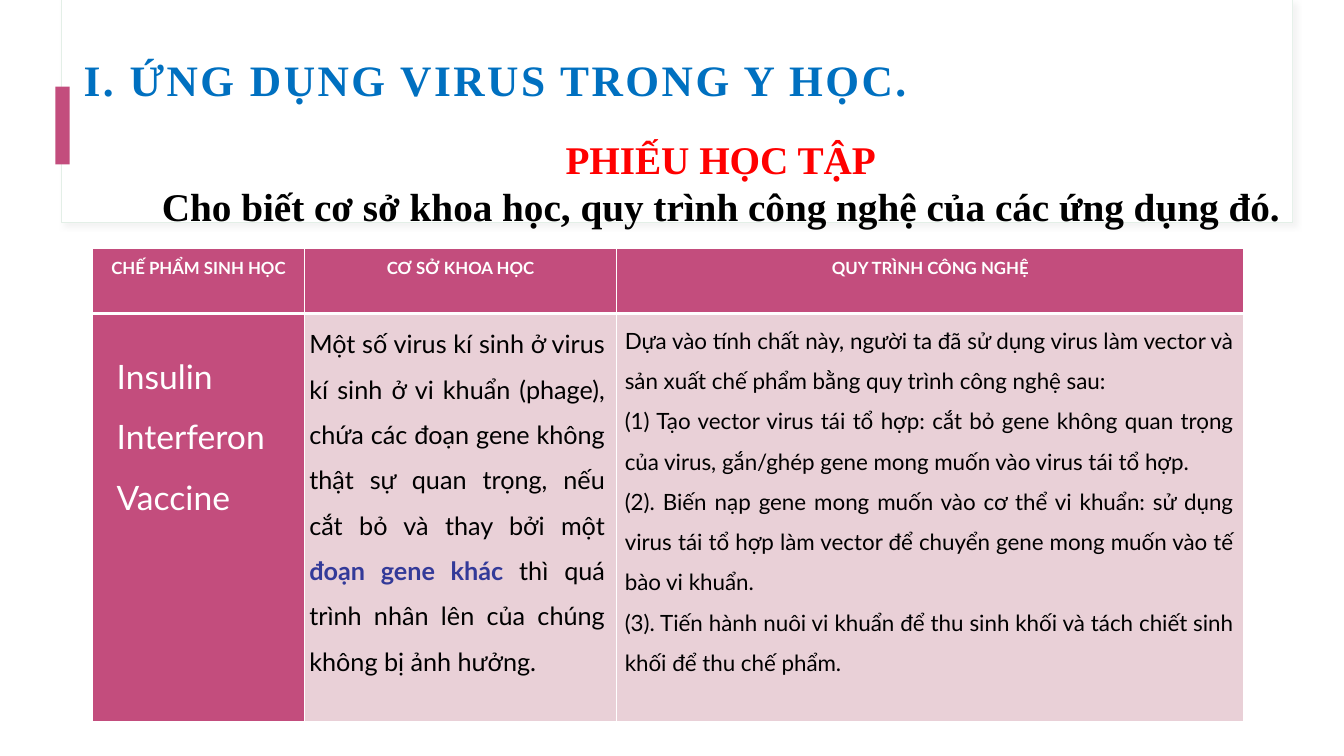
from lxml.etree import SubElement
from pptx import Presentation
from pptx.dml.color import RGBColor as RGB
from pptx.enum.shapes import MSO_SHAPE as SHAPE
from pptx.enum.text import MSO_ANCHOR as ANCHOR, MSO_AUTO_SIZE as AUTO, PP_ALIGN as ALIGN
from pptx.oxml import parse_xml
from pptx.oxml.ns import nsdecls, qn
from pptx.util import Inches, Pt

C = {"white": "FFFFFF", "edge": "E3EFE7", "pink": "C34D7D", "pale": "E9D0D7",
     "blue": "0070C0", "red": "FF0000", "black": "000000", "indigo": "333A99"}

prs = Presentation()
prs.slide_width, prs.slide_height = Inches(13.33), Inches(7.5)
s = prs.slides.add_slide(prs.slide_layouts[6])
COL, ROW = prs.slide_width / 100, prs.slide_height / 100  # 100 x 100 grid


def box(x, y, w, h):
    return [int(v) for v in (x * COL, y * ROW, w * COL, h * ROW)]


def write(tf, paras, align, spacing, **fmt):
    """Each paragraph is a list of (text, font changes) runs."""
    for i, runs in enumerate(paras):
        p = tf.paragraphs[0] if i == 0 else tf.add_paragraph()
        p.alignment, p.line_spacing = align, spacing
        for text, changes in runs:
            r = p.add_run()
            r.text = text
            look = {**fmt, **changes}
            r.font.color.rgb = RGB.from_string(C[look.pop("color")])
            for key, value in look.items():
                setattr(r.font, key, value)


# Header panel and accent bar
for place, fill, line in [((4.58, 0, 91.58, 29.47), "white", "edge"),
                          ((4.65, 0, 91.5, 29.33), "white", None),
                          ((4.13, 11.47, 1.05, 10.27), "pink", None)]:
    sp = s.shapes.add_shape(SHAPE.RECTANGLE, *box(*place))
    sp.shadow.inherit = False
    sp.fill.solid()
    sp.fill.fore_color.rgb = RGB.from_string(C[fill])
    if line:
        sp.line.color.rgb = RGB.from_string(C[line])
        sp.line.width = Pt(0.75)
        effects = sp._element.spPr.find(qn("a:effectLst"))
        effects.append(parse_xml(
            f'<a:outerShdw {nsdecls("a")} blurRad="50800" dist="38100" dir="2700000">'
            '<a:srgbClr val="D9D9D9"><a:alpha val="30000"/></a:srgbClr></a:outerShdw>'))
    else:
        sp.line.fill.background()

# Table grid
columns, rows = (15.75, 23.25, 46.65), (8.67, 54)
heads = ["CHẾ PHẨM SINH HỌC", "CƠ SỞ KHOA HỌC", "QUY TRÌNH CÔNG NGHỆ"]
table = s.shapes.add_table(2, 3, *box(6.9, 32.8, sum(columns), sum(rows))).table
for column, width in zip(table.columns, columns):
    column.width = int(width * COL)
for row, height in zip(table.rows, rows):
    row.height = int(height * ROW)
for i in range(2):
    for j, head in enumerate(heads):
        cell = table.cell(i, j)
        if i == 0:
            cell.margin_left = cell.margin_right = Inches(0.07)
            cell.margin_top = cell.margin_bottom = 0
            write(cell.text_frame, [[(head, {})]], ALIGN.CENTER, 1.5,
                  name="Lato", size=Pt(12), bold=True, color="white")
        cell.fill.solid()
        cell.fill.fore_color.rgb = RGB.from_string(C["pale" if i and j else "pink"])
        tcPr = cell._tc.get_or_add_tcPr()
        for k, side in enumerate(["lnL", "lnR", "lnT", "lnB"]):
            thick = (i, side) in [(0, "lnB"), (1, "lnT")]
            ln = SubElement(tcPr, qn(f"a:{side}"), w=str(Pt(3 if thick else 1)))
            SubElement(SubElement(ln, qn("a:solidFill")), qn("a:srgbClr"), val=C["white"])
            tcPr.insert(k, ln)

# Text: place, paragraphs, alignment, line spacing, font, frame
serif = {"name": "Times New Roman", "bold": True}
lato = {"name": "Lato", "color": "black"}
middle = {"vertical_anchor": ANCHOR.MIDDLE}
grow = {"auto_size": AUTO.SHAPE_TO_FIT_TEXT}
texts = [
    ((5.48, 4.53, 85.65, 12.67), [[("I. ỨNG DỤNG VIRUS TRONG Y HỌC.", {})]],
     ALIGN.LEFT, 0.9, {**serif, "size": Pt(31), "color": "blue"}, middle),
    ((10.8, 17.2, 85.65, 13.87),
     [[("PHIẾU HỌC TẬP", {"color": "red"})],
      [("Cho biết cơ sở khoa học, quy trình công nghệ của các ứng dụng đó.", {})]],
     ALIGN.CENTER, 1.0, {**serif, "size": Pt(28), "color": "black"},
     {**middle, **grow, "word_wrap": False}),
    ((22.28, 40.8, 23.48, 55.2),
     [[("Một số virus kí sinh ở virus kí sinh ở vi khuẩn (phage), chứa các đoạn gene "
        "không thật sự quan trọng, nếu cắt bỏ và thay bởi một ", {}),
       ("đoạn gene khác ", {"color": "indigo", "bold": True}),
       ("thì quá trình nhân lên của chúng không bị ảnh hưởng.", {})]],
     ALIGN.JUSTIFY, 1.5, {**lato, "size": Pt(18)}, grow),
    ((45.75, 40.8, 46.8, 54.67),
     [[(line, {})] for line in (
         "Dựa vào tính chất này, người ta đã sử dụng virus làm vector và sản xuất "
         "chế phẩm bằng quy trình công nghệ sau:",
         "(1) Tạo vector virus tái tổ hợp: cắt bỏ gene không quan trọng của virus, "
         "gắn/ghép gene mong muốn vào virus tái tổ hợp.",
         "(2). Biến nạp gene mong muốn vào cơ thể vi khuẩn: sử dụng virus tái tổ hợp "
         "làm vector để chuyển gene mong muốn vào tế bào vi khuẩn.",
         "(3). Tiến hành nuôi vi khuẩn để thu sinh khối và tách chiết sinh khối "
         "để thu chế phẩm.")],
     ALIGN.JUSTIFY, 1.5, {**lato, "size": Pt(16)}, grow),
    ((7.95, 43.73, 13.28, 24.67),
     [[(product, {})] for product in ("Insulin", "Interferon", "Vaccine")],
     ALIGN.LEFT, 1.5, {**lato, "size": Pt(24), "color": "white"}, grow),
]
for place, paras, align, spacing, font, frame in texts:
    tf = s.shapes.add_textbox(*box(*place)).text_frame
    for key, value in {"word_wrap": True, **frame}.items():
        setattr(tf, key, value)
    write(tf, paras, align, spacing, **font)
    if font.get("color") == "blue":  # letter-spaced heading
        tf.paragraphs[0].runs[0].font._element.set("spc", "180")

prs.save("out.pptx")
